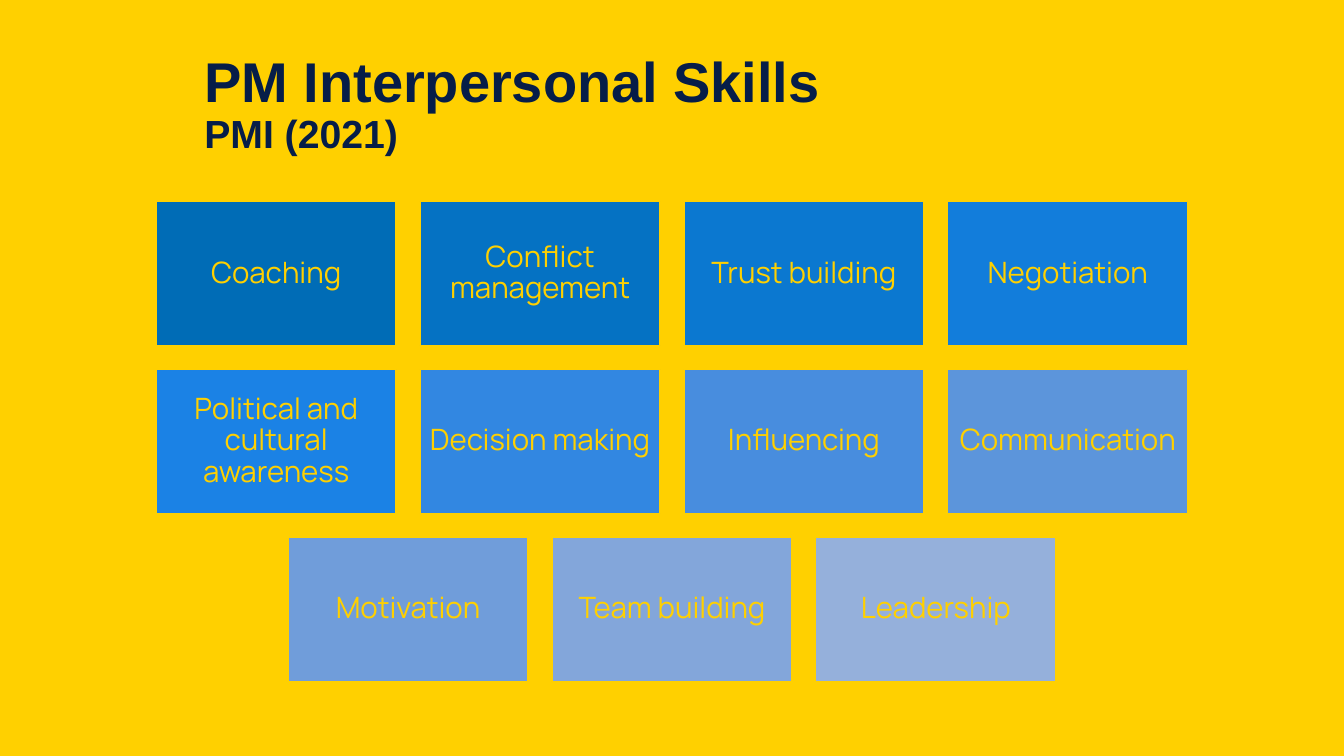
import pptx
import pptx.dml.color
import pptx.enum.shapes
import pptx.enum.text
import pptx.util

Cm = pptx.util.Cm
Pt = pptx.util.Pt
RGBColor = pptx.dml.color.RGBColor
MIDDLE = pptx.enum.text.MSO_ANCHOR.MIDDLE

TITLE_LINES = [("PM Interpersonal Skills", 40), ("PMI (2021)", 28)]
SKILL_ROWS = [
    [
        ("Coaching", RGBColor(0x00, 0x6C, 0xB6)),
        ("Conflict management", RGBColor(0x05, 0x72, 0xC3)),
        ("Trust building", RGBColor(0x0B, 0x78, 0xD0)),
        ("Negotiation", RGBColor(0x12, 0x7D, 0xDB)),
    ],
    [
        ("Political and cultural awareness", RGBColor(0x1B, 0x82, 0xE5)),
        ("Decision making", RGBColor(0x32, 0x87, 0xE1)),
        ("Influencing", RGBColor(0x48, 0x8D, 0xDE)),
        ("Communication", RGBColor(0x5C, 0x95, 0xDB)),
    ],
    [
        ("Motivation", RGBColor(0x70, 0x9D, 0xDA)),
        ("Team building", RGBColor(0x83, 0xA6, 0xDA)),
        ("Leadership", RGBColor(0x95, 0xB0, 0xDB)),
    ],
]
YELLOW = RGBColor(0xFF, 0xD0, 0x00)
NAVY = RGBColor(0x06, 0x1D, 0x48)

SLIDE_WIDTH, SLIDE_HEIGHT = 33.87, 19.05
TILE_WIDTH, TILE_HEIGHT = 6.05, 3.63
GAP_X, GAP_Y = 0.6, 0.6
TILES_TOP = 5.08
TILE_MARGIN = 0.22


def add_title(slide):
    title = slide.shapes.add_textbox(Cm(4.9), Cm(0.81), Cm(24.94), Cm(3.68))
    frame = title.text_frame
    frame.word_wrap = True
    frame.vertical_anchor = MIDDLE
    paragraph = frame.paragraphs[0]
    paragraph.text = "\v".join(text for text, size in TITLE_LINES)
    paragraph.line_spacing = 0.9
    for run, (text, size) in zip(paragraph.runs, TITLE_LINES):
        run.font.name = "Arial"
        run.font.size = Pt(size)
        run.font.bold = True
        run.font.color.rgb = NAVY


def add_tile(slide, left, top, skill, color):
    tile = slide.shapes.add_shape(
        pptx.enum.shapes.MSO_SHAPE.RECTANGLE,
        Cm(left), Cm(top), Cm(TILE_WIDTH), Cm(TILE_HEIGHT),
    )
    tile.shadow.inherit = False
    tile.fill.solid()
    tile.fill.fore_color.rgb = color
    tile.line.color.rgb = YELLOW
    tile.line.width = Pt(1)
    frame = tile.text_frame
    frame.word_wrap = True
    frame.vertical_anchor = MIDDLE
    frame.margin_left = frame.margin_right = Cm(TILE_MARGIN)
    frame.margin_top = frame.margin_bottom = Cm(TILE_MARGIN)
    frame.text = skill
    paragraph = frame.paragraphs[0]
    paragraph.alignment = pptx.enum.text.PP_ALIGN.CENTER
    paragraph.line_spacing = 0.9
    font = paragraph.runs[0].font
    font.name = "Manrope"
    font.size = Pt(21)
    font.color.rgb = YELLOW


def main():
    presentation = pptx.Presentation()
    presentation.slide_width = Cm(SLIDE_WIDTH)
    presentation.slide_height = Cm(SLIDE_HEIGHT)
    slide = presentation.slides.add_slide(presentation.slide_layouts[6])
    slide.background.fill.solid()
    slide.background.fill.fore_color.rgb = YELLOW

    add_title(slide)
    for row_index, row in enumerate(SKILL_ROWS):
        top = TILES_TOP + row_index * (TILE_HEIGHT + GAP_Y)
        row_width = len(row) * (TILE_WIDTH + GAP_X) - GAP_X
        row_left = (SLIDE_WIDTH - row_width) / 2
        for column, (skill, color) in enumerate(row):
            left = row_left + column * (TILE_WIDTH + GAP_X)
            add_tile(slide, left, top, skill, color)

    presentation.save("out.pptx")


if __name__ == "__main__":
    main()
